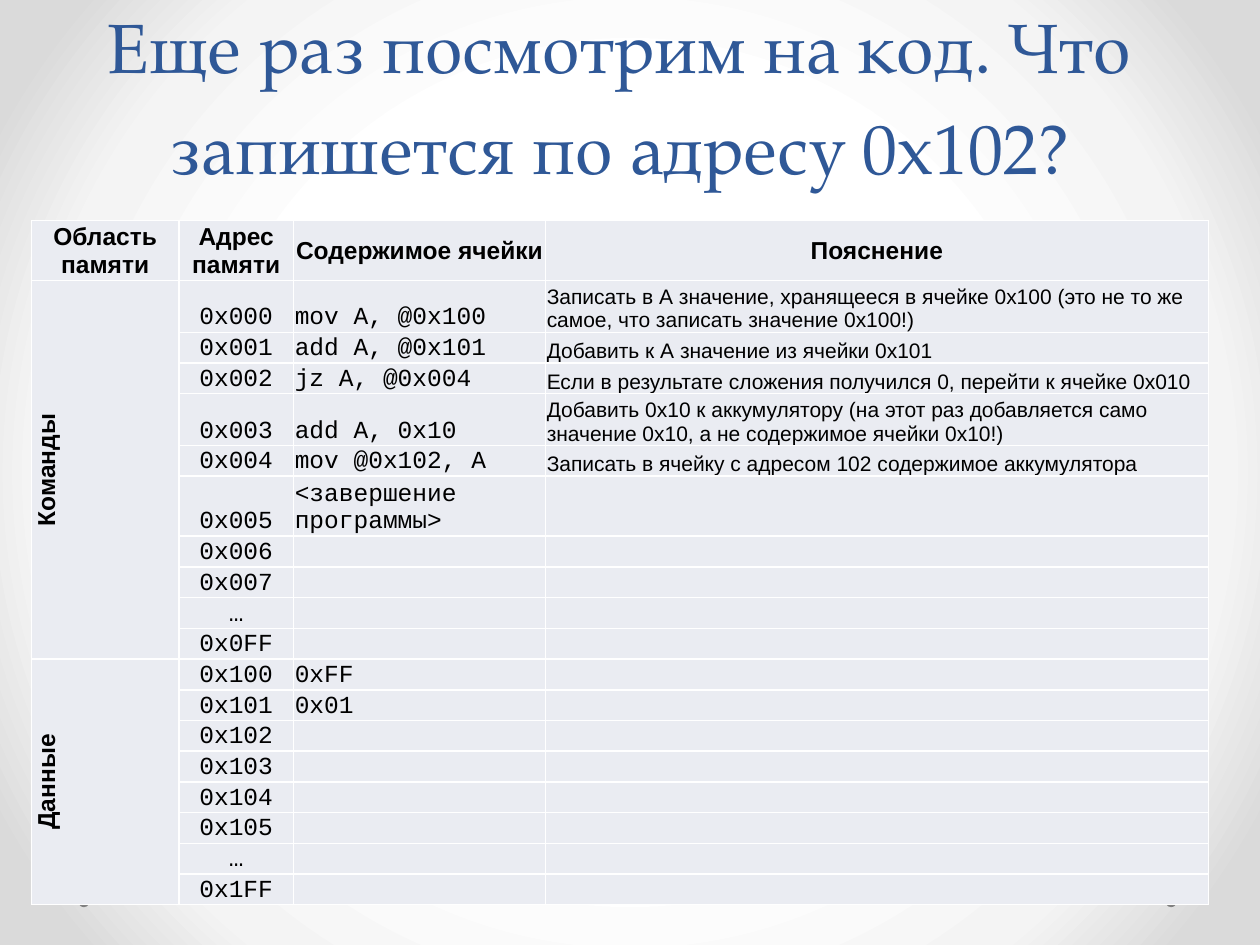
from lxml.etree import SubElement
from pptx import Presentation
from pptx.dml.color import RGBColor
from pptx.enum.shapes import MSO_SHAPE
from pptx.enum.text import MSO_ANCHOR, PP_ALIGN
from pptx.oxml import parse_xml
from pptx.oxml.ns import nsdecls, qn
from pptx.util import Inches, Pt

COLORS = {
    "title": "2F5897", "text": "000000", "cell": "EAECF2", "border": "FFFFFF",
    "dot": "808080", "center": "FFFFFF", "ring": "F4F4F4", "edge": "DADADA",
}
SANS, MONO, SERIF = "Arial", "Courier New", "TeX Gyre Pagella"

HEADERS = ["Область памяти", "Адрес памяти", "Содержимое ячейки", "Пояснение"]
COMMANDS = [
    ("0x000", "mov A, @0x100", "Записать в А значение, хранящееся в ячейке 0x100 "
     "(это не то же самое, что записать значение 0x100!)"),
    ("0x001", "add A, @0x101", "Добавить к А значение из ячейки 0x101"),
    ("0x002", "jz A, @0x004",
     "Если в результате сложения получился 0, перейти к ячейке 0x010"),
    ("0x003", "add A, 0x10", "Добавить 0x10 к аккумулятору (на этот раз добавляется "
     "само значение 0x10, а не содержимое ячейки 0x10!)"),
    ("0x004", "mov @0x102, A", "Записать в ячейку с адресом 102 содержимое аккумулятора"),
    ("0x005", "<завершение программы>", ""),
    *((address, "", "") for address in ("0x006", "0x007", "…", "0x0FF")),
]
DATA = [
    ("0x100", "0xFF", ""),
    ("0x101", "0x01", ""),
    *((address, "", "") for address in
      ("0x102", "0x103", "0x104", "0x105", "…", "0x1FF")),
]
AREAS = [("Команды", COMMANDS), ("Данные", DATA)]
COLUMN_WIDTHS = [1.17, 0.91, 2, 5.26]
ROW_HEIGHT = 0.23
TALL_ROWS = {0: 0.45, 1: 0.38, 4: 0.38, 6: 0.45}


def rgb(name):
    return RGBColor.from_string(COLORS[name])


def write_text(frame, text, font=SANS, size=14, color="text", bold=False,
               align=PP_ALIGN.LEFT, line_spacing=None):
    paragraph = frame.paragraphs[0]
    paragraph.alignment = align
    if line_spacing:
        paragraph.line_spacing = Pt(line_spacing)
    if not text:
        # The end mark keeps an empty cell from growing to 18 pt.
        SubElement(paragraph._p, qn("a:endParaRPr"), sz=str(size * 100))
        return
    run = paragraph.add_run()
    run.text = text
    run.font.name = font
    run.font.size = Pt(size)
    run.font.bold = bold
    run.font.color.rgb = rgb(color)


class SlideBuilder:
    def __init__(self, presentation):
        self.slide = presentation.slides.add_slide(presentation.slide_layouts[6])

    def background(self, stops):
        """Fill the background with a radial gradient of (percent, colour) stops."""
        fill = self.slide.background.fill
        fill.solid()
        properties = self.slide._element.cSld.bg.bgPr
        marks = "".join(
            f'<a:gs pos="{percent * 1000}"><a:srgbClr val="{COLORS[name]}"/></a:gs>'
            for percent, name in stops)
        gradient = parse_xml(
            f'<a:gradFill {nsdecls("a")} rotWithShape="1"><a:gsLst>{marks}</a:gsLst>'
            '<a:path path="circle"><a:fillToRect l="50000" t="50000" r="50000" '
            'b="50000"/></a:path></a:gradFill>')
        properties.replace(properties[0], gradient)

    def dot(self, left, top, diameter):
        shape = self.slide.shapes.add_shape(
            MSO_SHAPE.OVAL, Inches(left), Inches(top), Inches(diameter), Inches(diameter))
        shape.shadow.inherit = False
        shape.fill.solid()
        shape.fill.fore_color.rgb = rgb("dot")
        shape.line.fill.background()

    def title(self, text, left, top, width, height):
        shape = self.slide.shapes.add_textbox(
            Inches(left), Inches(top), Inches(width), Inches(height))
        frame = shape.text_frame
        frame.word_wrap = True
        frame.vertical_anchor = MSO_ANCHOR.BOTTOM
        frame.margin_top = frame.margin_bottom = 0
        write_text(frame, text, font=SERIF, size=40, color="title",
                   align=PP_ALIGN.CENTER, line_spacing=58)

    def table(self, left, top, widths, heights):
        table = self.slide.shapes.add_table(
            len(heights), len(widths), Inches(left), Inches(top),
            Inches(sum(widths)), Inches(sum(heights))).table
        for column, width in zip(table.columns, widths):
            column.width = Inches(width)
        for row, height in zip(table.rows, heights):
            row.height = Inches(height)
        for cell in table.iter_cells():
            self.style_cell(cell)
        return table

    def style_cell(self, cell):
        cell.margin_left = cell.margin_right = cell.margin_top = Inches(0.01)
        cell.margin_bottom = 0
        cell.fill.solid()
        cell.fill.fore_color.rgb = rgb("cell")
        properties = cell._tc.get_or_add_tcPr()
        for index, side in enumerate("LRTB"):
            properties.insert(index, parse_xml(
                f'<a:ln{side} {nsdecls("a")} w="{Pt(1)}"><a:solidFill>'
                f'<a:srgbClr val="{COLORS["border"]}"/></a:solidFill></a:ln{side}>'))

    def cell(self, cell, text, anchor=MSO_ANCHOR.BOTTOM, **text_format):
        cell.vertical_anchor = anchor
        write_text(cell.text_frame, text, **text_format)


def fill_memory_table(builder, table):
    heading = dict(anchor=MSO_ANCHOR.MIDDLE, bold=True, align=PP_ALIGN.CENTER)
    columns = [dict(font=MONO, align=PP_ALIGN.CENTER), dict(font=MONO), dict(size=12)]
    for column, text in enumerate(HEADERS):
        builder.cell(table.cell(0, column), text, **heading)
    first = 1
    for area, rows in AREAS:
        area_cell = table.cell(first, 0)
        area_cell.merge(table.cell(first + len(rows) - 1, 0))
        builder.cell(area_cell, area, **heading)
        area_cell._tc.get_or_add_tcPr().set("vert", "vert270")
        for row, texts in enumerate(rows, first):
            for column, (text, text_format) in enumerate(zip(texts, columns), 1):
                builder.cell(table.cell(row, column), text, **text_format)
        first += len(rows)


def main():
    presentation = Presentation()
    presentation.slide_width = Inches(10)
    presentation.slide_height = Inches(7.5)
    builder = SlideBuilder(presentation)
    builder.background([(50, "center"), (76, "ring"), (92, "edge")])
    for left in (9.25, 0.62):
        builder.dot(left, 7.11, 0.09)
    builder.title("Еще раз посмотрим на код. Что запишется по адресу 0x102?",
                  0.42, 0.33, 9, 1.17)
    row_count = 1 + sum(len(rows) for _, rows in AREAS)
    heights = [TALL_ROWS.get(row, ROW_HEIGHT) for row in range(row_count)]
    fill_memory_table(builder, builder.table(0.25, 1.75, COLUMN_WIDTHS, heights))
    presentation.save("out.pptx")


if __name__ == "__main__":
    main()
